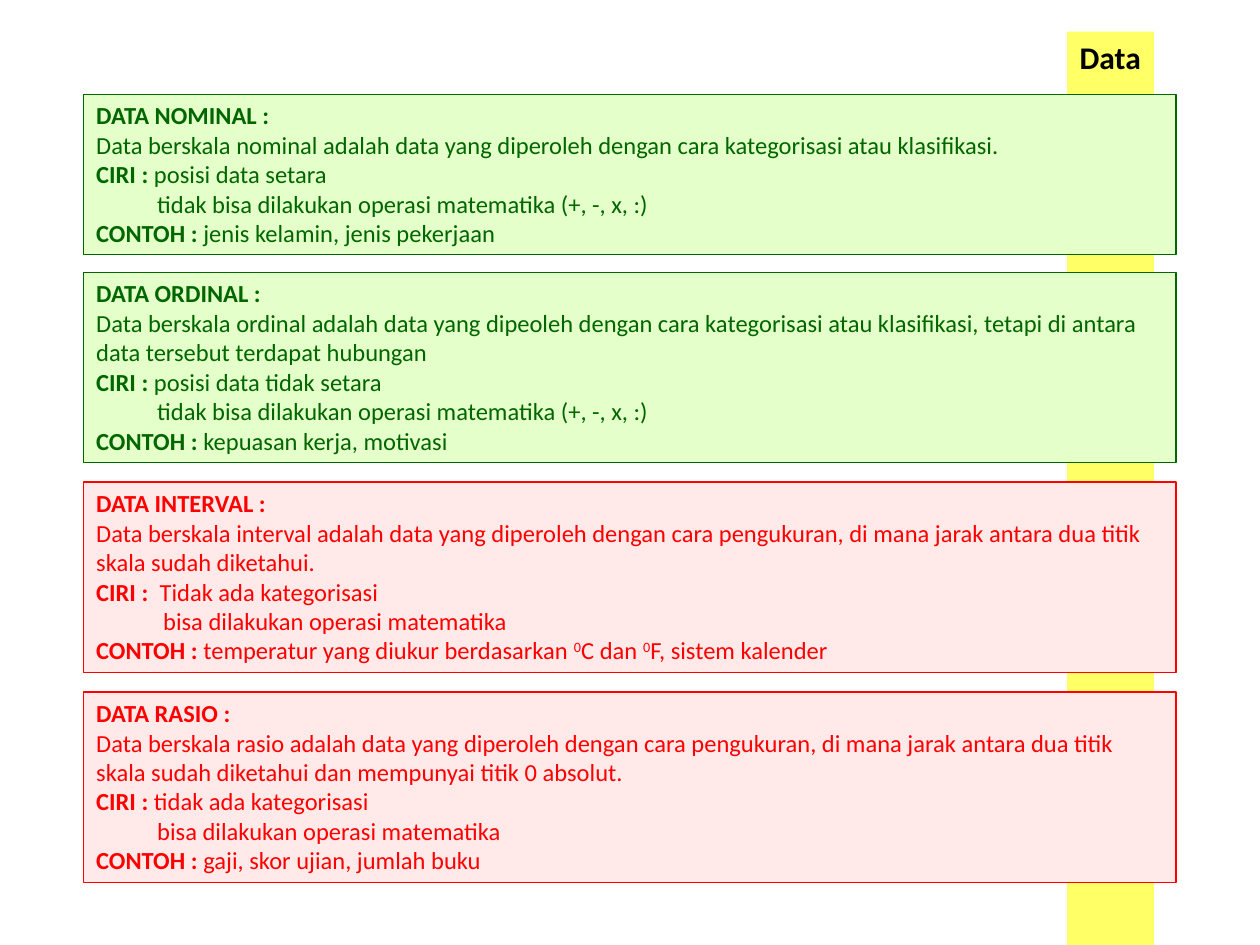
from dataclasses import dataclass

from pptx import Presentation
from pptx import util as u
from pptx.dml.color import RGBColor
from pptx.enum import shapes, text
from pptx.slide import Slide

BLACK = RGBColor(0x00, 0x00, 0x00)
YELLOW = RGBColor(0xFF, 0xFF, 0x66)
GREEN = RGBColor(0x00, 0x66, 0x00)
PALE_GREEN = RGBColor(0xE4, 0xFF, 0xC9)
RED = RGBColor(0xFF, 0x00, 0x00)
PALE_RED = RGBColor(0xFF, 0xE9, 0xE9)

LEFT, WIDTH = 1.69, 22.02
LINE_HEIGHT, PADDING = 0.61, 0.18

SCALES = [
    dict(top=1.9, lines=5, ink=GREEN, fill=PALE_GREEN, indent=1.23,
         heading="DATA NOMINAL :",
         definition="Data berskala nominal adalah data yang diperoleh dengan cara "
                    "kategorisasi atau klasifikasi.",
         traits=[" posisi data setara",
                 "tidak bisa dilakukan operasi matematika (+, -, x, :)"],
         example=[" jenis kelamin, jenis pekerjaan"]),
    dict(top=5.49, lines=6, ink=GREEN, fill=PALE_GREEN, indent=1.23,
         heading="DATA ORDINAL :",
         definition="Data berskala ordinal adalah data yang dipeoleh dengan cara "
                    "kategorisasi atau klasifikasi, tetapi di antara data tersebut "
                    "terdapat hubungan",
         traits=[" posisi data tidak setara",
                 "tidak bisa dilakukan operasi matematika (+, -, x, :)"],
         example=[" kepuasan kerja, motivasi"]),
    dict(top=9.72, lines=6, ink=RED, fill=PALE_RED, indent=1.35,
         heading="DATA INTERVAL :",
         definition="Data berskala interval adalah data yang diperoleh dengan cara "
                    "pengukuran, di mana jarak antara dua titik skala sudah diketahui.",
         traits=["  Tidak ada kategorisasi", "bisa dilakukan operasi matematika"],
         example=[" temperatur yang diukur berdasarkan ", "0", "C dan ", "0",
                  "F, sistem kalender"]),
    dict(top=13.95, lines=6, ink=RED, fill=PALE_RED, indent=1.23,
         heading="DATA RASIO :",
         definition="Data berskala rasio adalah data yang diperoleh dengan cara "
                    "pengukuran, di mana jarak antara dua titik skala sudah diketahui "
                    "dan mempunyai titik 0 absolut.",
         traits=[" tidak ada kategorisasi", "bisa dilakukan operasi matematika"],
         example=[" gaji, skor ujian, jumlah buku"]),
]


@dataclass
class Painter:
    page: Slide
    font: str = "Calibri"
    title_size: int = 18
    body_size: int = 14

    def style(self, span, size, color, bold):
        span.font.name = self.font
        span.font.size = u.Pt(size)
        span.font.color.rgb = color
        span.font.bold = bold

    def place(self, box, left, top, width, height, fill):
        box.left, box.top = u.Cm(left), u.Cm(top)
        box.width, box.height = u.Cm(width), u.Cm(height)
        box.fill.solid()
        box.fill.fore_color.rgb = fill
        frame = box.text_frame
        frame.auto_size = text.MSO_AUTO_SIZE.SHAPE_TO_FIT_TEXT
        frame.vertical_anchor = text.MSO_ANCHOR.TOP

    def title(self, words, left, top, width, height):
        box = self.page.shapes.title
        self.place(box, left, top, width, height, YELLOW)
        box.text_frame.word_wrap = False
        box.text_frame.text = words
        para = box.text_frame.paragraphs[0]
        para.alignment = text.PP_ALIGN.LEFT
        self.style(para.runs[0], self.title_size, BLACK, True)

    def paragraph(self, para, color, label="", parts=(), indent=0):
        para.alignment = text.PP_ALIGN.LEFT
        if indent:
            para._p.get_or_add_pPr().set("marL", str(u.Cm(indent)))
        if label:
            para.text = label
            self.style(para.runs[0], self.body_size, color, True)
        for index, part in enumerate(parts):
            span = para.add_run()
            span.text = part
            self.style(span, self.body_size, color, False)
            if index % 2:
                span._r.get_or_add_rPr().set("baseline", "30000")

    def scale_box(self, top, lines, ink, fill, indent, heading, definition,
                  traits, example):
        box = self.page.shapes.add_shape(shapes.MSO_SHAPE.RECTANGLE, 0, 0, 0, 0)
        self.place(box, LEFT, top, WIDTH, lines * LINE_HEIGHT + PADDING, fill)
        box.shadow.inherit = False
        box.line.color.rgb = ink
        box.line.width = u.Pt(0.75)
        frame = box.text_frame
        frame.word_wrap = True
        self.paragraph(frame.paragraphs[0], ink, heading)
        self.paragraph(frame.add_paragraph(), ink, parts=[definition])
        self.paragraph(frame.add_paragraph(), ink, "CIRI :", traits[:1])
        self.paragraph(frame.add_paragraph(), ink, parts=traits[1:], indent=indent)
        self.paragraph(frame.add_paragraph(), ink, "CONTOH :", example)


def main():
    deck = Presentation()
    deck.slide_width, deck.slide_height = u.Cm(25.4), u.Cm(19.05)
    title_only = deck.slide_layouts[5]
    painter = Painter(deck.slides.add_slide(title_only))
    painter.title("Data", 21.51, 0.64, 1.75, 1.03)
    for scale in SCALES:
        painter.scale_box(**scale)
    deck.save("out.pptx")


if __name__ == "__main__":
    main()
